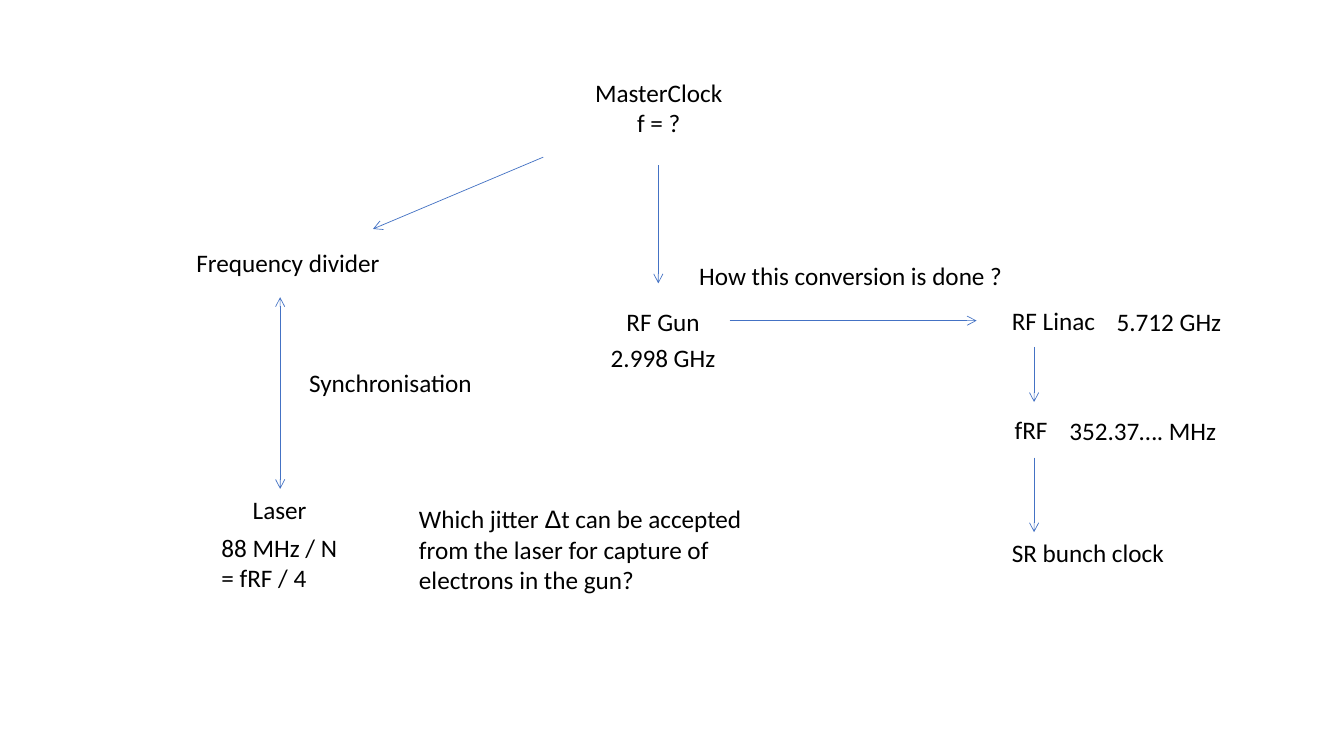
from lxml.etree import SubElement
from pptx import Presentation
from pptx.dml.color import RGBColor as RGB
from pptx.enum.shapes import MSO_CONNECTOR as Link
from pptx.enum.text import MSO_AUTO_SIZE as Fit, PP_ALIGN as Align
from pptx.oxml.ns import qn
from pptx.util import Cm, Pt

HUES = {"text": "000000", "arrow": "4472C4"}
LINE = 1.03

LABELS = [
    ("RF Linac", 25.25, 7.57, 2.64),
    ("5.712 GHz", 27.89, 7.59, 3.18),
    ("fRF", 25.32, 10.31, 1.5),
    ("352.37…. MHz", 26.7, 10.34, 4.24),
    ("SR bunch clock", 25.25, 13.41, 4.39),
    ("Frequency divider", 4.7, 6.12, 5.18),
    ("Synchronisation", 7.54, 9.12, 4.67),
    ("Laser", 6.12, 12.32, 1.88),
    ("2.998 GHz", 15.14, 8.51, 3.18),
    ("How this conversion is done ?", 17.37, 6.43, 8.26),
]

ARROWS = [
    (13.69, 3.96, 9.4, 5.77),
    (16.59, 4.17, 16.59, 7.14),
    (18.39, 8.08, 24.61, 8.08),
    (26.06, 8.74, 26.06, 10.13),
    (26.06, 11.53, 26.06, 13.41),
]


def add_text(slide, lines, left, top, width, height=LINE, wrap=False, align=Align.LEFT):
    box = slide.shapes.add_textbox(Cm(left), Cm(top), Cm(width), Cm(height))
    frame = box.text_frame
    frame.word_wrap = wrap
    frame.auto_size = Fit.SHAPE_TO_FIT_TEXT
    frame.text = lines
    for para in frame.paragraphs:
        para.alignment = align
        para.font.name = "Calibri"
        para.font.size = Pt(18)
        para.font.color.rgb = RGB.from_string(HUES["text"])
    return frame


def add_arrow(slide, x1, y1, x2, y2, ends=("tailEnd",)):
    line = slide.shapes.add_connector(Link.STRAIGHT, Cm(x1), Cm(y1), Cm(x2), Cm(y2))
    line.line.color.rgb = RGB.from_string(HUES["arrow"])
    line.line.width = Pt(0.5)
    stroke = line.line._get_or_add_ln()
    for end in ends:
        SubElement(stroke, qn("a:" + end), type="arrow")
    SubElement(line._element.spPr, qn("a:effectLst"))


def add_query(slide):
    frame = add_text(slide, "Which jitter ", 10.31, 12.57, 9.86, 2.57, wrap=True)
    para = frame.paragraphs[0]
    delta = para.add_run()
    delta.text = "Δ"
    delta.font.name = "Arial"
    para.add_run().text = "t can be accepted from the laser for capture of electrons in the gun?"


def main():
    deck = Presentation()
    deck.slide_width, deck.slide_height = Cm(33.87), Cm(19.05)
    slide = deck.slides.add_slide(deck.slide_layouts[6])
    for arrow in ARROWS:
        add_arrow(slide, *arrow)
    add_arrow(slide, 7.06, 7.49, 7.06, 12.32, ends=("headEnd", "tailEnd"))
    add_text(slide, "MasterClock\nf = ?", 13.03, 1.83, 7.14, 1.8, True, Align.CENTER)
    add_text(slide, "RF Gun", 14.68, 7.59, 4.06, wrap=True, align=Align.CENTER)
    for label in LABELS:
        add_text(slide, *label)
    add_text(slide, "88 MHz / N\n= fRF / 4", 5.33, 13.28, 3.48, 2.57)
    add_query(slide)
    deck.save("out.pptx")


if __name__ == "__main__":
    main()
